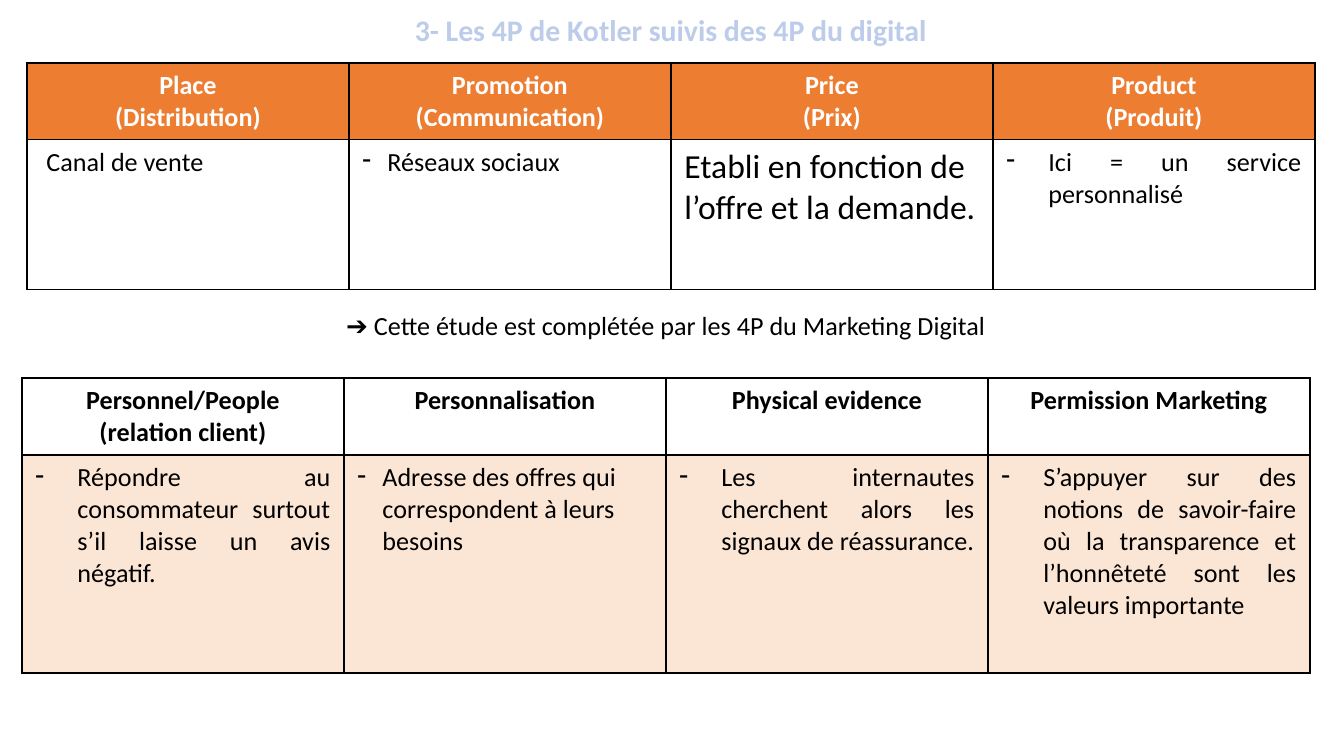
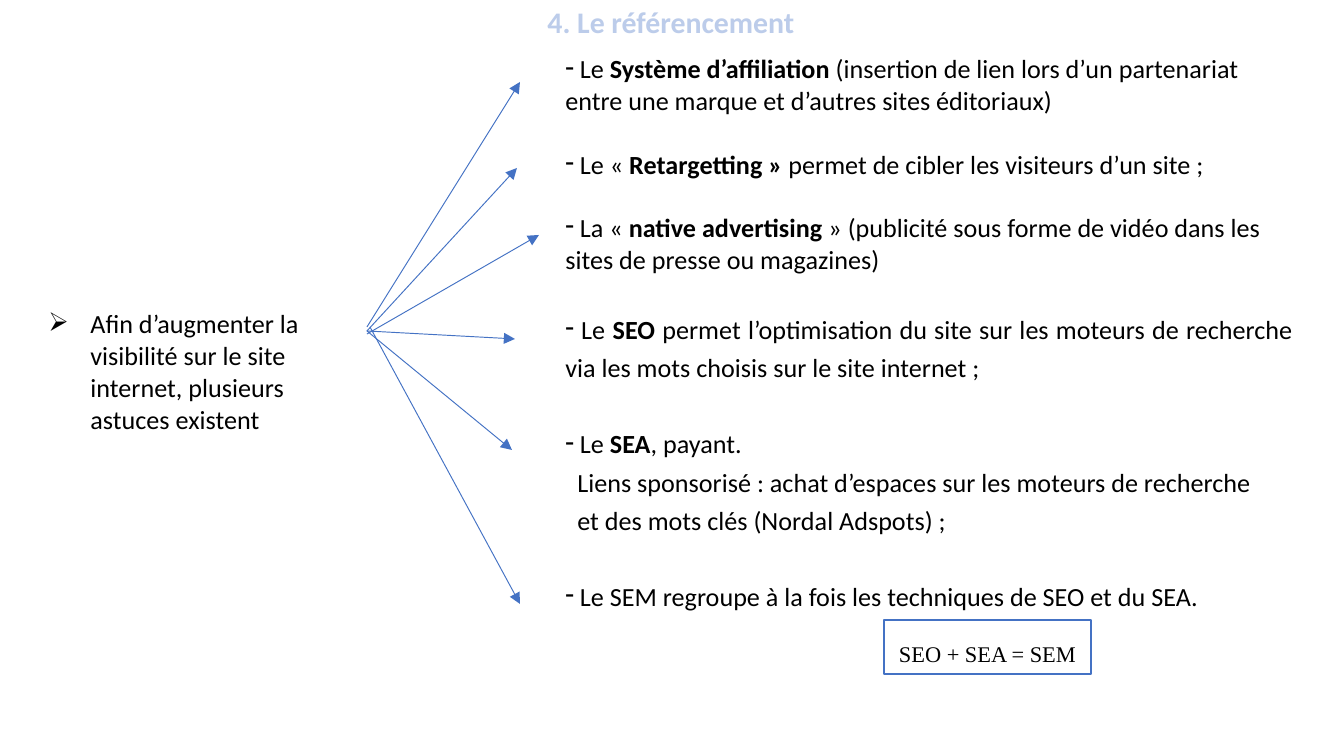
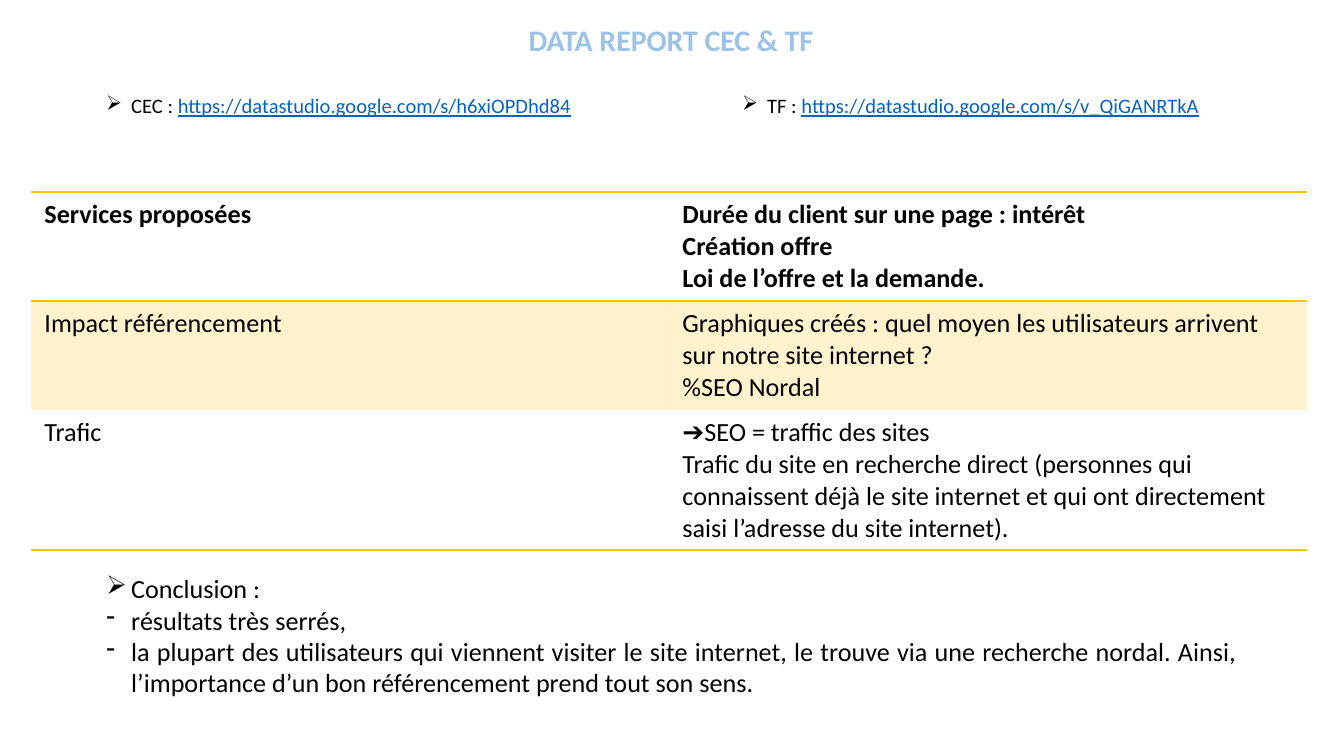
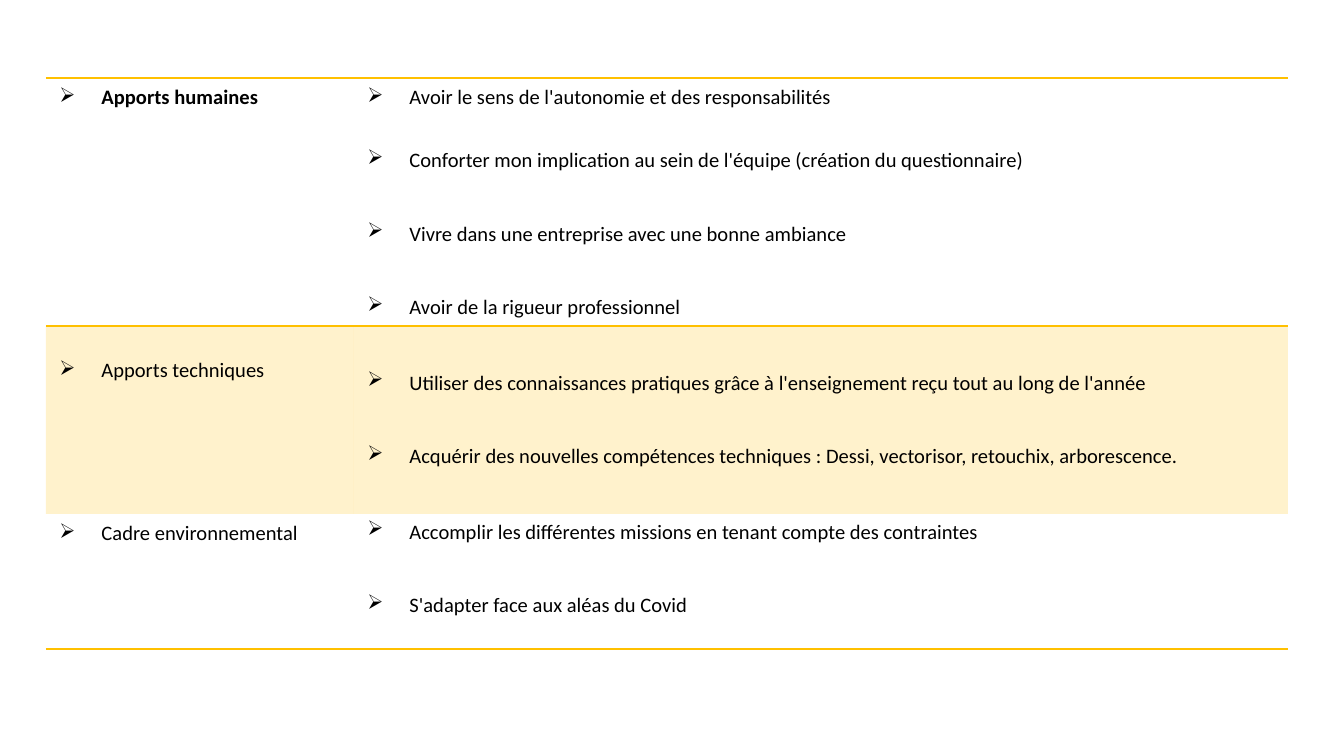
from lxml.etree import SubElement
from pptx import Presentation
from pptx.dml.color import RGBColor
from pptx.enum.shapes import MSO_CONNECTOR, MSO_SHAPE
from pptx.enum.text import MSO_ANCHOR, MSO_AUTO_SIZE, PP_ALIGN
from pptx.oxml.ns import qn
from pptx.util import Emu, Pt

SCALE = 914400 / 134.4
WIDTH, HEIGHT = 1344, 756
BLACK = RGBColor(0x00, 0x00, 0x00)
WHITE = RGBColor(0xFF, 0xFF, 0xFF)
LAVENDER = RGBColor(0xBC, 0xCC, 0xEA)
SKY = RGBColor(0x9C, 0xC2, 0xE5)
ORANGE = RGBColor(0xED, 0x7D, 0x31)
GOLD = RGBColor(0xFF, 0xC0, 0x00)
BLUE = RGBColor(0x44, 0x72, 0xC4)
LINK = RGBColor(0x05, 0x63, 0xC1)
FONT = "Calibri"
NO_GRID_STYLE = "{2D5ABB26-0587-4C30-8999-92F81FD0307C}"
CENTER, JUSTIFY = PP_ALIGN.CENTER, PP_ALIGN.JUSTIFY

DASH = {"bullet": "-", "indent": 25}
WIDE_DASH = {"bullet": "-", "indent": 42, "align": JUSTIFY}
ARROW = {"bullet": "➢", "indent": 42}
HEADING = {"bold": True, "align": CENTER}


def px(length):
    return Emu(round(length * SCALE))


def write_paragraph(para, text, size=14, color=BLACK, bold=False, font=FONT, align=None,
                    spacing=None, before=0, bullet=None, indent=0, left=0, link=False):
    properties = para._p.get_or_add_pPr()
    properties.set("marL", str(px(indent + left)))
    properties.set("indent", str(px(-indent)))
    if bullet:
        SubElement(properties, qn("a:buChar")).set("char", bullet)
    else:
        SubElement(properties, qn("a:buNone"))
    para.alignment = align
    para.space_before = Pt(before)
    if spacing:
        para.line_spacing = spacing
    for position, part in enumerate(text.split("**")):
        if not part:
            continue
        marked = position % 2 == 1
        span = para.add_run()
        span.text = part
        span.font.name = font
        span.font.size = Pt(size)
        span.font.bold = bold or (marked and not link)
        span.font.underline = marked and link
        span.font.color.rgb = LINK if marked and link else color


def write(frame, lines, **style):
    for position, line in enumerate(lines):
        text, own = line if isinstance(line, tuple) else (line, {})
        para = frame.paragraphs[0] if position == 0 else frame.add_paragraph()
        write_paragraph(para, text, **{**style, **own})


def add_text(page, left, top, width, height, lines, anchor=MSO_ANCHOR.TOP, **style):
    box = page.shapes.add_textbox(px(left), px(top), px(width), px(height))
    box.text_frame.word_wrap = True
    box.text_frame.vertical_anchor = anchor
    write(box.text_frame, lines, **style)


def add_title(page, text, height, color=LAVENDER, spacing=0.9):
    add_text(page, 36, 0, 1270, height, [text], anchor=MSO_ANCHOR.MIDDLE,
             size=16, bold=True, color=color, align=CENTER, spacing=spacing)


def cell(*lines, top_margin=7, **style):
    return {"lines": lines, "top_margin": top_margin, "style": style}


def draw_edges(target, sides, color):
    properties = target._tc.get_or_add_tcPr()
    for side in "LRTB":
        edge = SubElement(properties, qn("a:ln" + side))
        if side in sides:
            edge.set("w", str(Pt(1)))
            fill = SubElement(edge, qn("a:solidFill"))
            SubElement(fill, qn("a:srgbClr")).set("val", str(color))
        else:
            SubElement(edge, qn("a:noFill"))


def fill_cell(target, color, opacity):
    if color is None:
        target.fill.background()
        return
    target.fill.solid()
    target.fill.fore_color.rgb = color
    if opacity < 100:
        for tone in target._tc.tcPr.find(qn("a:solidFill")):
            SubElement(tone, qn("a:alpha")).set("val", str(opacity * 1000))


def add_grid(page, left, top, widths, heights, rows, edges=None, edge_color=BLACK, fills=None):
    frame = page.shapes.add_table(len(heights), len(widths), px(left), px(top),
                                  px(sum(widths)), px(sum(heights)))
    table = frame.table
    table.first_row = table.horz_banding = False
    for style in frame._element.iter(qn("a:tableStyleId")):
        style.text = NO_GRID_STYLE
    for column, width in zip(table.columns, widths):
        column.width = px(width)
    for index, (height, row) in enumerate(zip(heights, rows)):
        table.rows[index].height = px(height)
        color, opacity = (fills or {}).get(index, (None, 100))
        for number, content in enumerate(row):
            target = table.cell(index, number)
            draw_edges(target, edges[index] if edges else "", edge_color)
            fill_cell(target, color, opacity)
            target.margin_top = px(content["top_margin"])
            write(target.text_frame, content["lines"], **content["style"])


def add_four_columns(page, left, top, heights, rows, fills):
    add_grid(page, left, top, [322] * 4, heights, rows, edges=["LRTB"] * 2, fills=fills)


def add_gold_table(page, left, top, widths, heights, rows):
    add_grid(page, left, top, widths, heights, rows, edges=["TB", "", "B"],
             edge_color=GOLD, fills={1: (GOLD, 20)})


def add_arrow(page, start, end):
    arrow = page.shapes.add_connector(MSO_CONNECTOR.STRAIGHT, *map(px, start + end))
    arrow.line.color.rgb = BLUE
    arrow.line.width = Pt(0.5)
    SubElement(arrow.line._get_or_add_ln(), qn("a:tailEnd")).set("type", "triangle")
    SubElement(arrow._element.spPr, qn("a:effectLst"))


def add_formula(page, left, top, width, height, text):
    box = page.shapes.add_shape(MSO_SHAPE.RECTANGLE, px(left), px(top), px(width), px(height))
    box.shadow.inherit = False
    box.fill.solid()
    box.fill.fore_color.rgb = WHITE
    box.line.color.rgb = BLUE
    box.line.width = Pt(1)
    frame = box.text_frame
    frame.word_wrap = False
    frame.auto_size = MSO_AUTO_SIZE.SHAPE_TO_FIT_TEXT
    frame.vertical_anchor = MSO_ANCHOR.TOP
    write(frame, [text], size=12, font="Times New Roman", align=CENTER, spacing=1.5)


def build_marketing_mix(page):
    add_title(page, "3- Les 4P de Kotler suivis des 4P du digital", 63)
    kotler_names = [("Place", "(Distribution)"), ("Promotion", "(Communication)"),
                    ("Price", "(Prix)"), ("Product", "(Produit)")]
    add_four_columns(page, 27, 63, [76, 150], [
        [cell(*names, color=WHITE, **HEADING) for names in kotler_names],
        [cell(" Canal de vente", align=JUSTIFY),
         cell("Réseaux sociaux", **DASH),
         cell("Etabli en fonction de l’offre et la demande.", size=18),
         cell("Ici = un service personnalisé", **WIDE_DASH)],
    ], {0: (ORANGE, 100)})
    add_grid(page, 27, 288, [1278], [91], [
        [cell("➔ Cette étude est complétée par les 4P du Marketing Digital",
              align=CENTER, spacing=1.5)]])
    digital_names = [("Personnel/People", "(relation client)"), ("Personnalisation",),
                     ("Physical evidence",), ("Permission Marketing",)]
    add_four_columns(page, 22, 378, [77, 218], [
        [cell(*names, **HEADING) for names in digital_names],
        [cell("Répondre au consommateur surtout s’il laisse un avis négatif.", **WIDE_DASH),
         cell("Adresse des offres qui correspondent à leurs besoins", **DASH),
         cell("Les internautes cherchent alors les signaux de réassurance.", **WIDE_DASH),
         cell("S’appuyer sur des notions de savoir-faire où la transparence et l’honnêteté "
              "sont les valeurs importante", **WIDE_DASH)],
    ], {1: (ORANGE, 20)})


def build_referencing(page):
    add_title(page, "4. Le référencement", 47)
    single = {"bullet": "-", "before": 17}
    loose = {"align": JUSTIFY, "spacing": 1.2}
    tips = [
        (" Le **Système d’affiliation **(insertion de lien lors d’un partenariat entre une "
         "marque et d’autres sites éditoriaux)", {"bullet": "-"}),
        (" Le « **Retargetting »** permet de cibler les visiteurs d’un site ;", single),
        (" La « **native advertising **» (publicité sous forme de vidéo dans les sites de "
         "presse ou magazines)", single),
        (" Le **SEO** permet l’optimisation du site sur les moteurs de recherche via les "
         "mots choisis sur le site internet ;", {**single, **loose}),
        (" Le **SEA**, payant.", {**loose, "bullet": "-", "before": 20.5}),
        ("Liens sponsorisé : achat d’espaces sur les moteurs de recherche",
         {**loose, "left": 12}),
        ("et des mots clés (Nordal Adspots) ;", {**loose, "left": 12}),
        (" Le SEM regroupe à la fois les techniques de SEO et du SEA.",
         {**loose, "bullet": "-", "before": 20.5}),
    ]
    goal = cell("Afin d’augmenter la visibilité sur le site internet, plusieurs astuces existent",
                top_margin=262, **ARROW)
    add_grid(page, 35, 47, [297, 220, 755], [628], [[goal, cell(), cell(*tips)]])
    add_formula(page, 884, 620, 207, 54, "SEO + SEA = SEM")
    for start, end in [((367, 327), (520, 82)), ((367, 331), (517, 168)),
                       ((367, 334), (539, 235)), ((367, 331), (515, 339)),
                       ((367, 331), (512, 450)), ((370, 327), (520, 604))]:
        add_arrow(page, start, end)


def build_data_report(page):
    add_title(page, "DATA REPORT CEC & TF", 62, color=SKY, spacing=1.5)
    reports = [(93, 496, "CEC : **https://datastudio.google.com/s/h6xiOPDhd84**"),
               (729, 552, "TF : **https://datastudio.google.com/s/v_QiGANRTkA**")]
    for left, width, text in reports:
        add_text(page, left, 74, width, 50, [text], size=11, link=True, spacing=1.5,
                 align=JUSTIFY, bullet="➢", indent=25)
    add_gold_table(page, 31, 192, [638, 638], [109, 109, 140], [
        [cell("Services proposées", bold=True),
         cell("Durée du client sur une page : intérêt", "Création offre",
              "Loi de l’offre et la demande.", bold=True)],
        [cell("Impact référencement"),
         cell("Graphiques créés : quel moyen les utilisateurs arrivent sur notre site internet ?",
              "%SEO Nordal")],
        [cell("Trafic"),
         cell("➔SEO = traffic des sites",
              "Trafic du site en recherche direct (personnes qui connaissent déjà le site "
              "internet et qui ont directement saisi l’adresse du site internet).")],
    ])
    add_text(page, 93, 566, 1158, 141, [
        ("Conclusion :", {"bullet": "➢"}),
        "résultats très serrés,",
        "la plupart des utilisateurs qui viennent visiter le site internet, le trouve via une "
        "recherche nordal. Ainsi, l’importance d’un bon référencement prend tout son sens.",
    ], align=JUSTIFY, **DASH)


def build_contributions(page):
    item = {"size": 11, **ARROW}
    spaced = {**item, "spacing": 0.9, "before": 27}
    add_gold_table(page, 46, 78, [308, 934], [248, 188, 135], [
        [cell("Apports humaines", bold=True, **item),
         cell(("Avoir le sens de l'autonomie et des responsabilités",
               {"spacing": 1, "before": 0}),
              ("Conforter mon implication au sein de l'équipe (création du questionnaire)",
               {"before": 21}),
              "Vivre dans une entreprise avec une bonne ambiance",
              "Avoir de la rigueur professionnel", **spaced)],
        [cell("Apports techniques", top_margin=32, **item),
         cell(("Utiliser des connaissances pratiques grâce à l'enseignement reçu tout au long "
               "de l'année", {"before": 0}),
              "Acquérir des nouvelles compétences techniques : Dessi, vectorisor, "
              "retouchix, arborescence.", top_margin=46, **spaced)],
        [cell("Cadre environnemental", **item),
         cell(("Accomplir les différentes missions en tenant compte des contraintes",
               {"before": 0}),
              "S'adapter face aux aléas du Covid", **spaced)],
    ])


def main():
    deck = Presentation()
    deck.slide_width, deck.slide_height = px(WIDTH), px(HEIGHT)
    for build in (build_marketing_mix, build_referencing, build_data_report,
                  build_contributions):
        build(deck.slides.add_slide(deck.slide_layouts[6]))
    deck.save("out.pptx")


if __name__ == "__main__":
    main()
